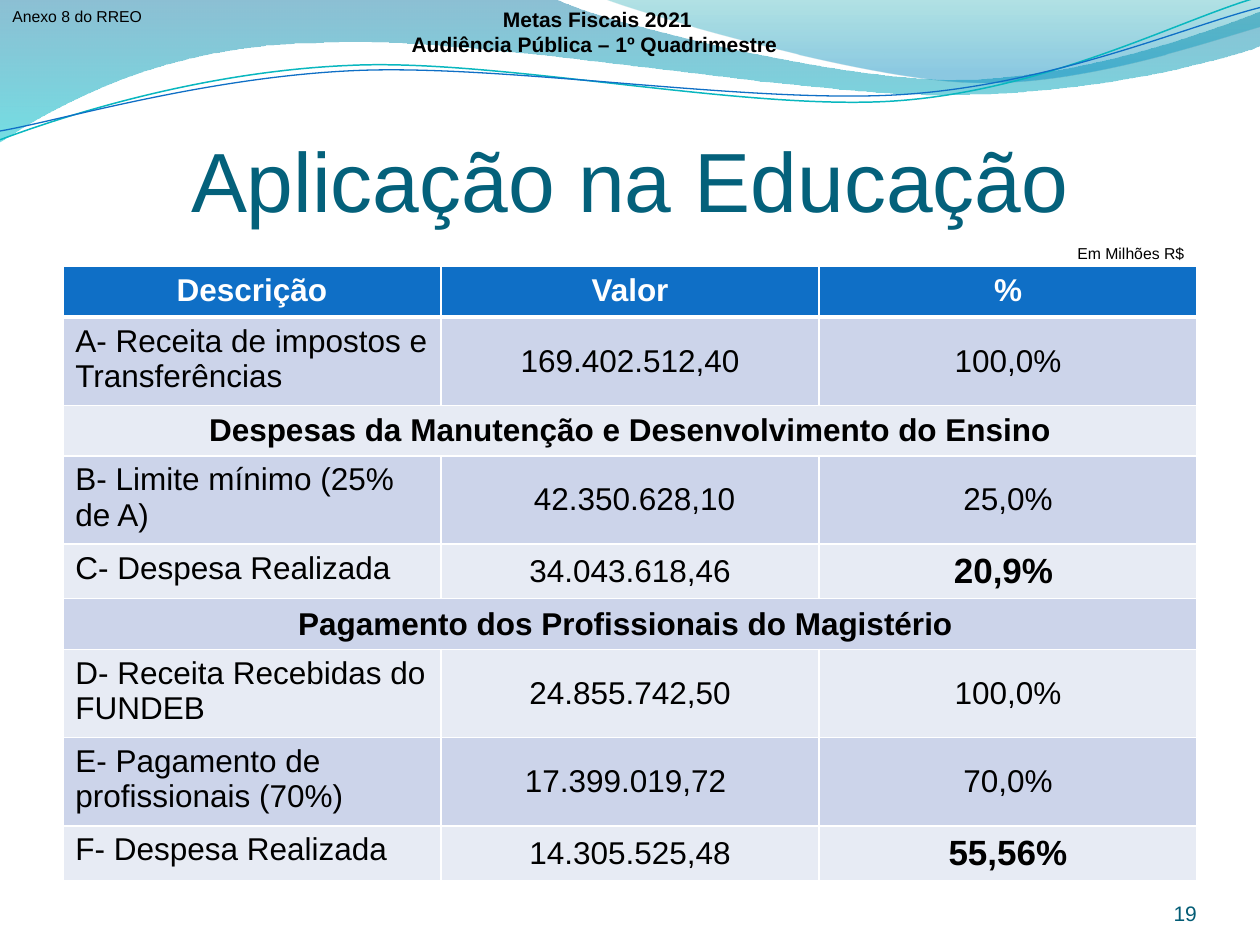
import collections

import pptx
import pptx.dml.color
import pptx.enum.text
import pptx.oxml
import pptx.oxml.ns
import pptx.util
from pptx.util import Cm

Box = collections.namedtuple("Box", "left top width height")
ALIGN = pptx.enum.text.PP_ALIGN
ANCHOR = pptx.enum.text.MSO_ANCHOR

# Wave points are counted in tenths of the page width.
RIBBONS = [
    dict(start=(0, 0), angle=270, stops=[(0, "0074A0", 45), (1, "00C4CD", 55)], steps=[
        (4.4, -0.01),
        (4.76, 0.17, 6.64, 0.63, 7.58, 0.63),
        (8.53, 0.63, 9.58, 0.26, 10, 0.09),
        (10.01, 0.36),
        (9.83, 0.44, 8.7, 0.76, 7.46, 0.75),
        (6.22, 0.75, 3.82, 0.28, 2.57, 0.34),
        (1.29, 0.35, 0.46, 0.83, -0.01, 1.13)]),
    dict(start=(4.79, -0.01), angle=90, stops=[(0.2, "008ABF", 45), (1, "00A0A8", 30)], steps=[
        (5.09, 0.11, 6.82, 0.62, 7.69, 0.65),
        (8.56, 0.69, 9.61, 0.32, 10, 0.21),
        (10, 0)]),
]
STRANDS = [
    dict(start=(0, 1.11), color="09B7BF", weight=0.85, steps=[
        (0.48, 0.93, 1.58, 0.57, 2.77, 0.52),
        (3.95, 0.46, 5.93, 0.89, 7.13, 0.8),
        (8.33, 0.71, 9.38, 0.15, 9.98, -0.02)]),
    dict(start=(0, 1.04), color="0F6FC6", weight=0.75, steps=[
        (0.47, 0.96, 1.64, 0.61, 2.83, 0.56),
        (4.03, 0.51, 5.97, 0.83, 7.17, 0.75),
        (8.36, 0.67, 9.41, 0.21, 10, 0.06)]),
]
ROWS = [
    ("Descrição", "Valor", "%"),
    ("A- Receita de impostos e Transferências", "169.402.512,40", "100,0%"),
    ("Despesas da Manutenção e Desenvolvimento do Ensino",),
    ("B- Limite mínimo (25% de A)", "42.350.628,10", "25,0%"),
    ("C- Despesa Realizada", "34.043.618,46", "20,9%"),
    ("Pagamento dos Profissionais do Magistério",),
    ("D- Receita Recebidas do FUNDEB", "24.855.742,50", "100,0%"),
    ("E- Pagamento de profissionais (70%)", "17.399.019,72", "70,0%"),
    ("F- Despesa Realizada", "14.305.525,48", "55,56%"),
]
SHORT, TALL, RESULT = 1.02, 1.78, 1.1
HEIGHTS = [SHORT, TALL, SHORT, TALL, RESULT, SHORT, TALL, TALL, RESULT]
NUDGES = {(3, 1): 0.18, (4, 2): -0.18, (5, 0): -0.18, (7, 1): -0.18}
INSET = (0.25, 0.13, 0.25, 0.13)


def box_cm(*lengths):
    return Box(*(Cm(length) for length in lengths))


def rgb(value):
    return pptx.dml.color.RGBColor.from_string(value)


def element(tag, attributes="", content=""):
    names = pptx.oxml.ns.nsdecls("a")
    return pptx.oxml.parse_xml(f"<a:{tag} {names} {attributes}>{content}</a:{tag}>")


def set_values(target, values):
    for name, value in values.items():
        setattr(target, name, value)


def set_margins(target, margins):
    for side, margin in zip(("left", "top", "right", "bottom"), margins):
        setattr(target, f"margin_{side}", Cm(margin))


def write(frame, lines, size, color, align, bold=False):
    for index, line in enumerate(lines):
        para = frame.add_paragraph() if index else frame.paragraphs[0]
        para.alignment = align
        span = para.add_run()
        span.text = line
        set_values(span.font, dict(name="Arial", size=pptx.util.Pt(size), bold=bold))
        span.font.color.rgb = rgb(color)


def bend_segments(shape, steps):
    segments = iter(list(shape._element.iter(pptx.oxml.ns.qn("a:lnTo"))))
    for step in steps:
        corners = [next(segments) for _ in step[::2]]
        if len(corners) == 3:
            curve = element("cubicBezTo")
            corners[0].addprevious(curve)
            for corner in corners:
                curve.append(corner[0])
                corner.getparent().remove(corner)


def add_outline(page, box, start, steps, close):
    unit = box.width / 10
    points = [start] + [pair for step in steps for pair in zip(step[::2], step[1::2])]
    placed = [(box.left + x * unit, box.top + y * unit) for x, y in points]
    builder = page.shapes.build_freeform(*placed[0])
    builder.add_line_segments(placed[1:], close=close)
    shape = builder.convert_to_shape()
    bend_segments(shape, steps)
    shape.shadow.inherit = False
    return shape


def add_waves(page, box):
    for ribbon in RIBBONS:
        shape = add_outline(page, box, ribbon["start"], ribbon["steps"], True)
        shape.line.fill.background()
        shape.fill.gradient()
        shape.fill.gradient_angle = ribbon["angle"]
        for stop, (position, color, opacity) in zip(shape.fill.gradient_stops, ribbon["stops"]):
            stop.position = position
            stop.color.rgb = rgb(color)
        tints = shape._element.spPr.iter(pptx.oxml.ns.qn("a:srgbClr"))
        for tint, (position, color, opacity) in zip(tints, ribbon["stops"]):
            tint.append(element("alpha", f'val="{opacity * 1000}"'))
    for strand in STRANDS:
        shape = add_outline(page, box, strand["start"], strand["steps"], False)
        shape.fill.background()
        shape.line.color.rgb = rgb(strand["color"])
        shape.line.width = pptx.util.Pt(strand["weight"])


def add_title(page, box, text):
    title = page.shapes.title
    set_values(title, box._asdict())
    frame = title.text_frame
    set_values(frame, dict(word_wrap=True, vertical_anchor=ANCHOR.MIDDLE,
                           auto_size=pptx.enum.text.MSO_AUTO_SIZE.NONE))
    set_margins(frame, (0, 0.13, 0, 0))
    write(frame, [text], 48, "04617B", ALIGN.CENTER)


def add_note(page, box, lines, size, align, color="000000", bold=False,
             anchor=ANCHOR.TOP, inset=INSET):
    frame = page.shapes.add_textbox(*box).text_frame
    set_values(frame, dict(word_wrap=False, vertical_anchor=anchor))
    set_margins(frame, inset)
    write(frame, lines, size, color, align, bold)


def add_borders(cell, row):
    properties = cell._tc.get_or_add_tcPr()
    for side in "LRTB":
        heavy = (row, side) in ((0, "B"), (1, "T"))
        width = pptx.util.Pt(3 if heavy else 0.96)
        properties.append(element(f"ln{side}", f'w="{width}"',
                                  '<a:solidFill><a:srgbClr val="FFFFFF"/></a:solidFill>'))


def add_spending_table(page, box):
    table = page.shapes.add_table(len(ROWS), 3, *box).table
    for column in table.columns:
        column.width = box.width // 3
    for row, (texts, height) in enumerate(zip(ROWS, HEIGHTS)):
        table.rows[row].height = Cm(height)
        section = len(texts) == 1
        if section:
            table.cell(row, 0).merge(table.cell(row, 2))
        for column in range(3):
            cell = table.cell(row, column)
            add_borders(cell, row)
            cell.fill.solid()
            cell.fill.fore_color.rgb = rgb("0F6FC6" if row == 0 else ("E7EBF4", "CCD4EA")[row % 2])
            if column >= len(texts):
                continue
            label = column == 0 and row > 0 and not section
            result = height == RESULT and column == 2
            cell.vertical_anchor = ANCHOR.TOP if label or row == 0 else ANCHOR.MIDDLE
            nudge = NUDGES.get((row, column), 0)
            set_margins(cell, (0.25 + max(nudge, 0), 0.13, 0.25 + max(-nudge, 0), 0.13))
            write(cell.text_frame, [texts[column]], 20 if result else 18,
                  "FFFFFF" if row == 0 else "000000",
                  ALIGN.LEFT if label else ALIGN.CENTER, row == 0 or section or result)


def main():
    deck = pptx.Presentation()
    set_values(deck, dict(slide_width=Cm(25.4), slide_height=Cm(19.05)))
    page = deck.slides.add_slide(deck.slide_layouts[5])
    add_waves(page, box_cm(0, 0, 25.4, 2.9))
    add_title(page, box_cm(1.27, 1.96, 22.86, 3.18), "Aplicação na Educação")
    add_spending_table(page, box_cm(1.27, 5.37, 22.86, sum(HEIGHTS)))
    add_note(page, box_cm(22.02, 17.65, 2.11, 1.02), ["19"], 12, ALIGN.RIGHT,
             color="035C75", anchor=ANCHOR.BOTTOM, inset=(0, 0, 0, 0))
    add_note(page, box_cm(21.46, 4.79, 2.67, 0.64), ["Em Milhões R$"], 9, ALIGN.CENTER)
    add_note(page, box_cm(0, 0, 3.45, 0.62), ["Anexo 8 do RREO"], 9, ALIGN.LEFT)
    add_note(page, box_cm(7.74, 0, 8.61, 1.27),
             ["Metas Fiscais 2021", "Audiência Pública – 1º Quadrimestre "], 12,
             ALIGN.CENTER, bold=True, anchor=ANCHOR.MIDDLE)
    deck.save("out.pptx")


if __name__ == "__main__":
    main()
